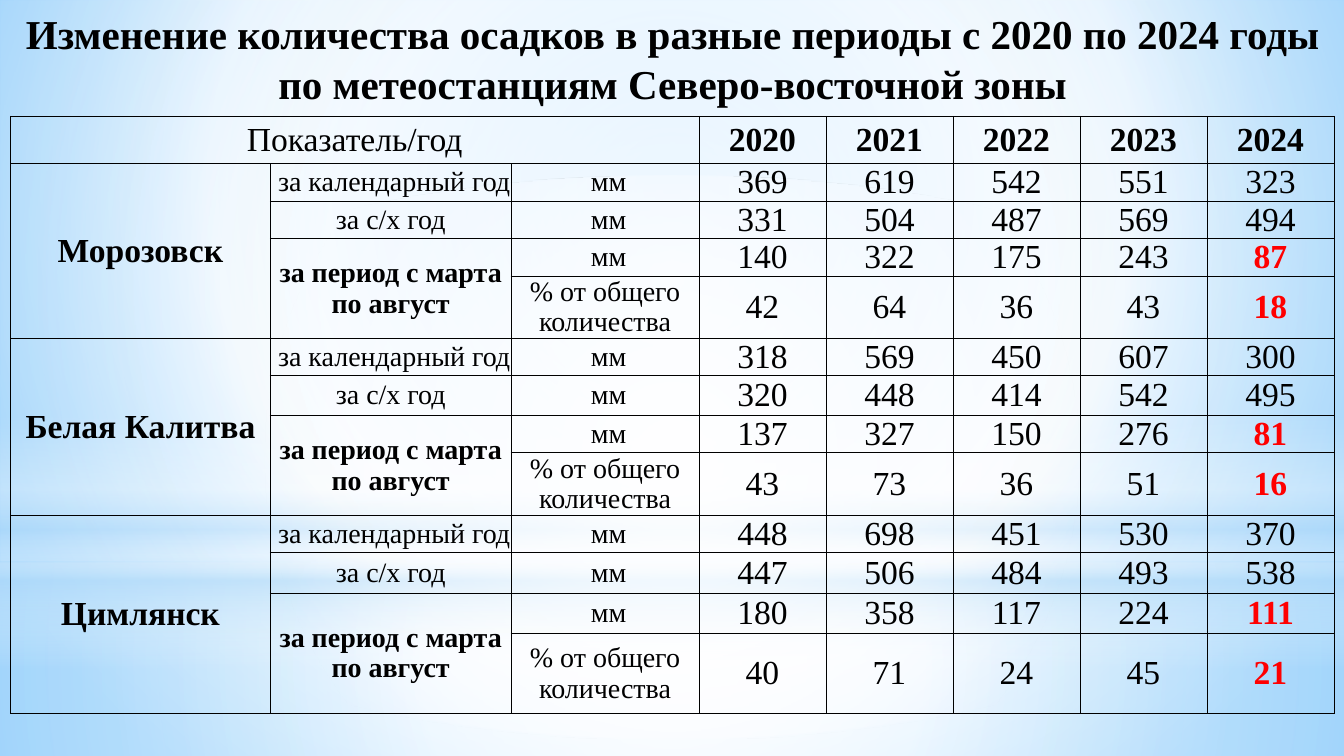
from lxml import etree
from pptx import Presentation
from pptx.dml.color import RGBColor
from pptx.enum.shapes import MSO_SHAPE
from pptx.enum.text import MSO_ANCHOR, MSO_AUTO_SIZE, PP_ALIGN
from pptx.oxml.ns import qn
from pptx.util import Cm, Pt

RECTANGLE, OVAL = MSO_SHAPE.RECTANGLE, MSO_SHAPE.OVAL
TOP, MIDDLE = MSO_ANCHOR.TOP, MSO_ANCHOR.MIDDLE
CENTER = PP_ALIGN.CENTER
GROW = MSO_AUTO_SIZE.SHAPE_TO_FIT_TEXT

FONT = "Times New Roman"
BLACK, RED, WHITE, PALE_BLUE = "000000", "FF0000", "FFFFFF", "B4DCFA"
MIDPOINT = (50, 50, 50, 50)

TITLE_LINES = [
    "Изменение количества осадков в разные периоды с 2020 по 2024 годы",
    "по метеостанциям Северо-восточной зоны",
]
YEARS = ["2020", "2021", "2022", "2023", "2024"]
MEASURES = [
    (" за календарный год", " мм"),
    ("за с/х год", " мм"),
    ("за период с марта по август", " мм"),
    ("", "% от общего количества"),
]
SEASON_ROW = 2  # the first of the two March-August rows of a station
STATIONS = {
    "Морозовск": [
        (369, 619, 542, 551, 323),
        (331, 504, 487, 569, 494),
        (140, 322, 175, 243, 87),
        (42, 64, 36, 43, 18),
    ],
    "Белая Калитва": [
        (318, 569, 450, 607, 300),
        (320, 448, 414, 542, 495),
        (137, 327, 150, 276, 81),
        (43, 73, 36, 51, 16),
    ],
    "Цимлянск": [
        (448, 698, 451, 530, 370),
        (447, 506, 484, 493, 538),
        (180, 358, 117, 224, 111),
        (40, 71, 24, 45, 21),
    ],
}
COLUMN_WIDTHS = [4.91, 4.55, 3.55] + [2.4] * len(YEARS)
ROW_HEIGHTS = [0.89, 0.71, 0.71, 0.71, 1.17, 0.71, 0.75, 0.71, 1.18,
               0.71, 0.76, 0.76, 1.51]

# shape, top, height, gradient stops (position, colour, opacity), centre
GLOWS = [
    (RECTANGLE, 10.64, 3.65,
     [(0, WHITE, 91), (37, WHITE, 76), (100, PALE_BLUE, 79)], MIDPOINT),
    (RECTANGLE, 0, 10.64,
     [(0, WHITE, 89), (48, WHITE, 62), (100, PALE_BLUE, 79)], MIDPOINT),
    (RECTANGLE, 7.85, 4.78,
     [(0, WHITE, 0), (29, WHITE, 30), (45, PALE_BLUE, 40), (55, WHITE, 26),
      (65, PALE_BLUE, 60), (100, WHITE, 0)], None),
    (OVAL, 3.33, 10.64, [(0, WHITE, 100), (56, WHITE, 0)], MIDPOINT),
]
SKY = [(0, "9ED5FF", 100), (60, WHITE, 100), (100, "5BB9FF", 100)]


def rgb(color):
    return RGBColor.from_string(color)


def add_child(parent, tag, **attributes):
    values = {name: str(value) for name, value in attributes.items()}
    return etree.SubElement(parent, qn(tag), values)


def set_gradient(fill, owner, stops, center):
    """Fill owner's element circularly round center, or downwards if it is None."""
    fill.background()
    empty_fill = next(owner.iter(qn("a:noFill")))
    gradient = etree.Element(qn("a:gradFill"), rotWithShape="1")
    stop_list = add_child(gradient, "a:gsLst")
    for position, color, opacity in stops:
        stop = add_child(stop_list, "a:gs", pos=position * 1000)
        tint = add_child(stop, "a:srgbClr", val=color)
        if opacity < 100:
            add_child(tint, "a:alpha", val=opacity * 1000)
    if center:
        circle = add_child(gradient, "a:path", path="circle")
        sides = {side: part * 1000 for side, part in zip("ltrb", center)}
        add_child(circle, "a:fillToRect", **sides)
    else:
        add_child(gradient, "a:lin", ang=90 * 60000, scaled=0)
    empty_fill.getparent().replace(empty_fill, gradient)


def add_glow(slide, width, preset, top, height, stops, center):
    glow = slide.shapes.add_shape(preset, 0, Cm(top), width, Cm(height))
    glow.shadow.inherit = False
    set_gradient(glow.fill, glow.element, stops, center)
    glow.line.fill.background()


def write(paragraph, text, size, bold=False, color=BLACK):
    paragraph.alignment = CENTER
    run = paragraph.add_run()
    run.text = text
    formats = {"name": FONT, "size": Pt(size), "bold": bold}
    for attribute, value in formats.items():
        setattr(run.font, attribute, value)
    run.font.color.rgb = rgb(color)


def prepare_cell(cell):
    formats = {"margin_left": 0, "margin_right": 0, "margin_top": 0,
               "margin_bottom": 0, "vertical_anchor": MIDDLE}
    for attribute, value in formats.items():
        setattr(cell, attribute, value)
    properties = cell._tc.get_or_add_tcPr()
    for side in "LRTB":
        border = add_child(properties, f"a:ln{side}", w=Pt(0.5))
        add_child(add_child(border, "a:solidFill"), "a:srgbClr", val=BLACK)
    cell.fill.background()


def write_cell(cell, text, size=18, **style):
    write(cell.text_frame.paragraphs[0], text, size, **style)


def fill_station(table, top, station, records):
    table.cell(top, 0).merge(table.cell(top + len(records) - 1, 0))
    write_cell(table.cell(top, 0), station, bold=True)
    season = top + SEASON_ROW
    table.cell(season, 1).merge(table.cell(season + 1, 1))
    for row, ((period, unit), values) in enumerate(zip(MEASURES, records), top):
        if period:
            write_cell(table.cell(row, 1), period, 15, bold=row == season)
        write_cell(table.cell(row, 2), unit, 15)
        for column, value in enumerate(values, 3):
            alarming = row >= season and column == len(COLUMN_WIDTHS) - 1
            write_cell(table.cell(row, column), str(value), bold=alarming,
                       color=RED if alarming else BLACK)


def add_rainfall_table(slide):
    table = slide.shapes.add_table(
        len(ROW_HEIGHTS), len(COLUMN_WIDTHS), Cm(0.2), Cm(2.2),
        Cm(sum(COLUMN_WIDTHS)), Cm(sum(ROW_HEIGHTS))).table
    table.first_row = table.horz_banding = False
    for column, width in zip(table.columns, COLUMN_WIDTHS):
        column.width = Cm(width)
    for row, height in zip(table.rows, ROW_HEIGHTS):
        row.height = Cm(height)
    for cell in table.iter_cells():
        prepare_cell(cell)

    table.cell(0, 0).merge(table.cell(0, 2))
    write_cell(table.cell(0, 0), "Показатель/год")
    for column, year in enumerate(YEARS, 3):
        write_cell(table.cell(0, column), year, bold=True)
    for index, (station, records) in enumerate(STATIONS.items()):
        fill_station(table, 1 + index * len(MEASURES), station, records)


def place_title(slide):
    """Set the heading and bring it in front of the glows."""
    title = slide.shapes.title
    place = {"left": Cm(0.2), "top": Cm(0.03), "width": Cm(25.02),
             "height": Cm(2.13)}
    for attribute, value in place.items():
        setattr(title, attribute, value)
    frame = title.text_frame
    frame.word_wrap, frame.auto_size, frame.vertical_anchor = True, GROW, TOP
    for index, line in enumerate(TITLE_LINES):
        paragraph = frame.add_paragraph() if index else frame.paragraphs[0]
        paragraph.line_spacing = Pt(26.5)
        paragraph.space_before = Pt(0)
        write(paragraph, line, 22, bold=True)
    title.element.getparent().append(title.element)


def main():
    deck = Presentation()
    deck.slide_width, deck.slide_height = Cm(25.4), Cm(14.29)
    slide = deck.slides.add_slide(deck.slide_layouts[5])
    set_gradient(slide.background.fill, slide.element, SKY, (20, 10, 20, 60))
    for glow in GLOWS:
        add_glow(slide, deck.slide_width, *glow)
    add_rainfall_table(slide)
    place_title(slide)
    deck.save("out.pptx")


if __name__ == "__main__":
    main()
